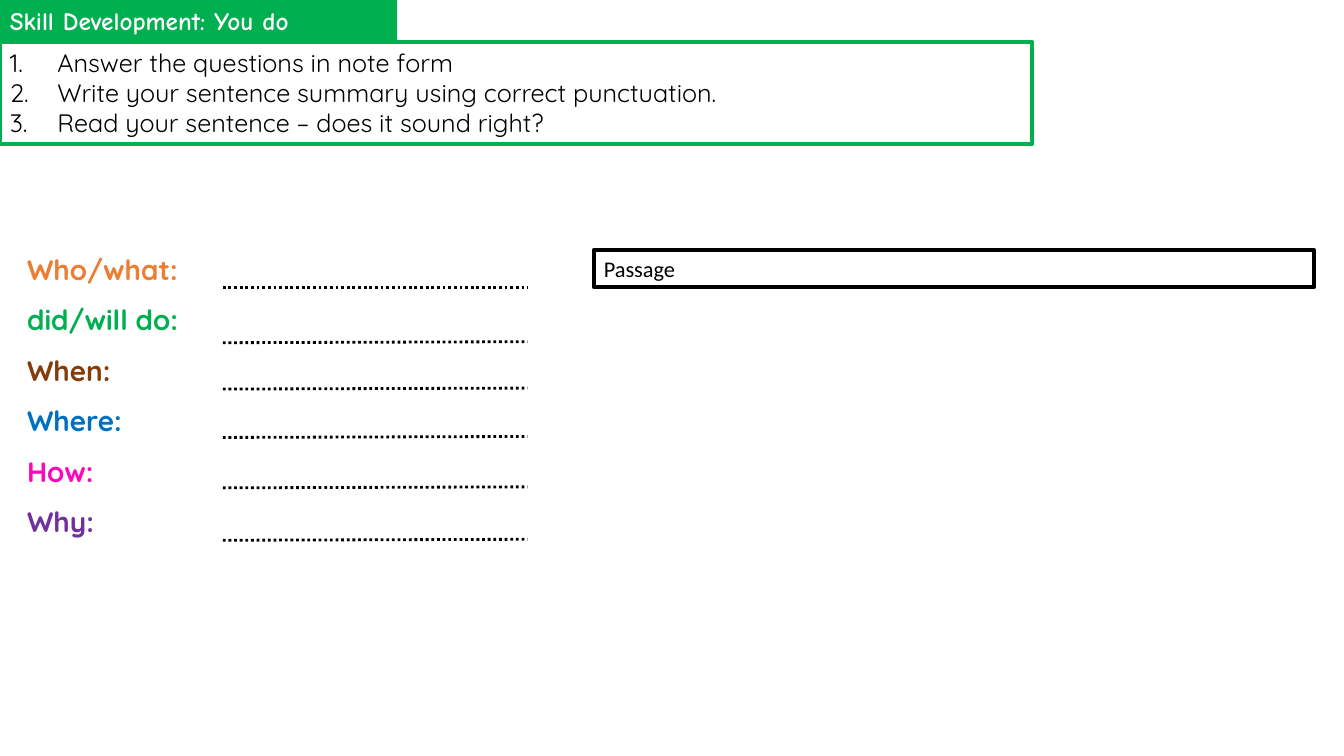
from dataclasses import dataclass

from lxml import etree
from pptx import Presentation
from pptx.dml.color import RGBColor
from pptx.enum.dml import MSO_LINE_DASH_STYLE as Dash
from pptx.enum.shapes import MSO_CONNECTOR as Connector, MSO_SHAPE as Shape
from pptx.enum.text import MSO_ANCHOR as Anchor, MSO_AUTO_SIZE as AutoSize, PP_ALIGN as Align
from pptx.oxml.ns import qn
from pptx.util import Inches, Pt


@dataclass(frozen=True)
class Theme:
    green: str = "00B050"
    white: str = "FFFFFF"
    black: str = "000000"
    orange: str = "ED7D31"
    brown: str = "843C0B"
    blue: str = "0070C0"
    pink: str = "FC08BC"
    purple: str = "7030A0"
    heading_font: str = "Comic Neue"
    task_font: str = "Quicksand"
    passage_font: str = "Calibri"
    heading_size: int = 18
    passage_size: int = 16
    question_size: int = 20
    border: int = 3
    rule: int = 2


THEME = Theme()

STEPS = [
    "Answer the questions in note form",
    "Write your sentence summary using correct punctuation.",
    "Read your sentence – does it sound right?",
]

# Question, its colour, and the start and end heights of its answer line
QUESTIONS = [
    ("Who/what:", THEME.orange, 2.85, 2.85),
    ("did/will do:", THEME.green, 3.4, 3.39),
    ("When:", THEME.brown, 3.86, 3.85),
    ("Where:", THEME.blue, 4.34, 4.33),
    ("How:", THEME.pink, 4.84, 4.83),
    ("Why:", THEME.purple, 5.36, 5.35),
]


def rgb(value):
    return RGBColor.from_string(value)


def prepare_frame(frame, wrap=True):
    frame.word_wrap = wrap
    frame.auto_size = AutoSize.SHAPE_TO_FIT_TEXT
    frame.vertical_anchor = Anchor.TOP


def add_panel(slide, left, top, width, height, fill=None, border=None):
    """Rectangle ready for left-aligned text; returns its text frame."""
    panel = slide.shapes.add_shape(
        Shape.RECTANGLE, Inches(left), Inches(top), Inches(width), Inches(height))
    panel.shadow.inherit = False
    if fill:
        panel.fill.solid()
        panel.fill.fore_color.rgb = rgb(fill)
    else:
        panel.fill.background()
    if border:
        panel.line.color.rgb = rgb(border)
        panel.line.width = Pt(THEME.border)
    else:
        panel.line.fill.background()
    prepare_frame(panel.text_frame)
    return panel.text_frame


def write(paragraph, text, font, size, color, bold=False):
    paragraph.alignment = Align.LEFT
    run = paragraph.add_run()
    run.text = text
    run.font.name = font
    run.font.size = Pt(size)
    run.font.bold = bold
    run.font.color.rgb = rgb(color)


def number(paragraph, indent):
    """Automatic numbering with a hanging indent."""
    properties = paragraph._p.get_or_add_pPr()
    properties.set("marL", str(Inches(indent)))
    properties.set("indent", str(-Inches(indent)))
    etree.SubElement(properties, qn("a:buFont"), typeface="+mj-lt")
    etree.SubElement(properties, qn("a:buAutoNum"), type="arabicPeriod")


def paragraph_at(frame, index):
    return frame.add_paragraph() if index else frame.paragraphs[0]


def add_answer_line(slide, start_y, end_y):
    answer = slide.shapes.add_connector(
        Connector.STRAIGHT, Inches(2.21), Inches(start_y), Inches(5.23), Inches(end_y))
    answer.line.color.rgb = rgb(THEME.black)
    answer.line.width = Pt(THEME.rule)
    answer.line.dash_style = Dash.ROUND_DOT
    etree.SubElement(answer._element.spPr, qn("a:effectLst"))


def add_steps(slide):
    steps = add_panel(slide, 0, 0.42, 10.24, 1.01, THEME.white, THEME.green)
    for index, step in enumerate(STEPS):
        paragraph = paragraph_at(steps, index)
        number(paragraph, 0.47)
        write(paragraph, step, THEME.task_font, THEME.heading_size, THEME.black)


def add_questions(slide):
    labels = slide.shapes.add_textbox(
        Inches(0.17), Inches(2.29), Inches(1.72), Inches(3.13)).text_frame
    prepare_frame(labels, wrap=False)
    for index, (question, color, start_y, end_y) in enumerate(QUESTIONS):
        paragraph = paragraph_at(labels, index)
        paragraph.line_spacing = 1.5
        write(paragraph, question, THEME.task_font, THEME.question_size, color, bold=True)
        add_answer_line(slide, start_y, end_y)


def main():
    deck = Presentation()
    deck.slide_width, deck.slide_height = Inches(13.33), Inches(7.5)
    slide = deck.slides.add_slide(deck.slide_layouts[6])

    # Heading and steps
    heading = add_panel(slide, 0, 0, 3.94, 0.4, fill=THEME.green)
    write(heading.paragraphs[0], "Skill Development: You do",
          THEME.heading_font, THEME.heading_size, THEME.white, bold=True)
    add_steps(slide)

    # Questions with answer lines
    add_questions(slide)

    # Passage
    passage = add_panel(slide, 5.89, 2.48, 7.14, 0.37, border=THEME.black)
    write(passage.paragraphs[0], "Passage",
          THEME.passage_font, THEME.passage_size, THEME.black)

    deck.save("out.pptx")


if __name__ == "__main__":
    main()
